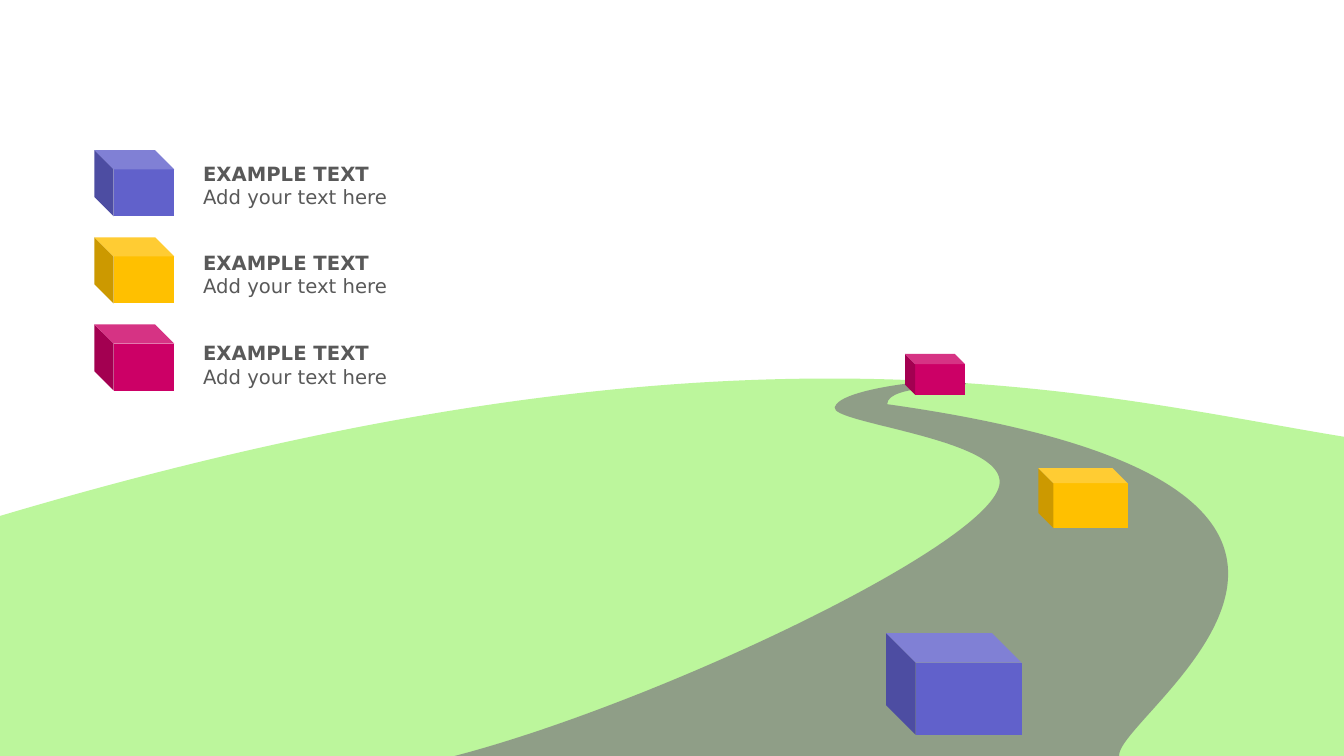
from copy import deepcopy
from dataclasses import dataclass

from lxml.etree import SubElement
from pptx import Presentation
from pptx.dml.color import RGBColor as Rgb
from pptx.enum.shapes import MSO_SHAPE as Shape
from pptx.enum.text import MSO_AUTO_SIZE as Fit
from pptx.oxml.ns import qn
from pptx.util import Pt

UNIT = 9525  # EMU in one px, 96 px to the inch


@dataclass(frozen=True)
class Theme:
    font: str = "DejaVu Sans"
    size: int = 14
    ink: str = "595959"
    hill: str = "BCF69C"
    road: str = "808080"
    blue: str = "6161CB"
    gold: str = "FFC000"
    pink: str = "CC0066"


def scale(box):
    return [n * UNIT for n in box]


class Deck:
    def __init__(self, theme, width, height):
        self.theme = theme
        self.file = Presentation()
        self.file.slide_width = width * UNIT
        self.file.slide_height = height * UNIT
        self.slide = self.file.slides.add_slide(self.file.slide_layouts[6])

    def paint(self, shape, color):
        shape.shadow.inherit = False
        shape.fill.solid()
        shape.fill.fore_color.rgb = Rgb.from_string(color)
        shape.line.fill.background()

    def area(self, box, start, parts, color, alpha=100):
        """Closed outline: a part of one point is a line, of three a curve."""
        left, top, width, height = box
        pen = self.slide.shapes.build_freeform(*start, scale=UNIT)
        pen.add_line_segments([part[-1] for part in parts])
        shape = pen.convert_to_shape()
        shape.left, shape.top, shape.width, shape.height = scale(box)

        trace = next(shape._element.iter(qn("a:path")))
        for old in list(trace):
            trace.remove(old)
        trace.set("w", str(width * UNIT))
        trace.set("h", str(height * UNIT))
        tags = {1: "a:lnTo", 3: "a:cubicBezTo"}
        steps = [("a:moveTo", [start])] + [(tags[len(p)], p) for p in parts]
        for tag, points in steps:
            step = SubElement(trace, qn(tag))
            for x, y in points:
                SubElement(step, qn("a:pt"), x=str((x - left) * UNIT),
                           y=str((y - top) * UNIT))
        SubElement(trace, qn("a:close"))

        self.paint(shape, color)
        if alpha < 100:
            tint = next(shape._element.spPr.iter(qn("a:srgbClr")))
            SubElement(tint, qn("a:alpha"), val=str(alpha * 1000))
        return shape

    def cube(self, box, color, depth=0.25):
        shape = self.slide.shapes.add_shape(Shape.CUBE, *scale(box))
        shape.adjustments[0] = depth
        shape._element.spPr.get_or_add_xfrm().set("flipH", "1")
        self.paint(shape, color)
        return shape

    def label(self, box, head, body):
        frame = self.slide.shapes.add_textbox(*scale(box)).text_frame
        frame.word_wrap = True
        frame.auto_size = Fit.SHAPE_TO_FIT_TEXT
        frame.text = f"{head}\n{body}".replace("\n", "\v")
        line = frame.paragraphs[0]
        for run, bold in zip(line.runs, (True, False)):
            font = run.font
            font.name = self.theme.font
            font.size = Pt(self.theme.size)
            font.bold = bold
            font.color.rgb = Rgb.from_string(self.theme.ink)
        gap = line._p.find(qn("a:br"))
        gap.append(deepcopy(line.runs[0]._r.rPr))


def main():
    look = Theme()
    deck = Deck(look, 1280, 720)

    hill = deck.area((-2, 361, 1282, 359), (-2, 492), [
        [(700, 283), (1036, 376), (1280, 416)],
        [(1280, 720)],
        [(0, 720)],
        [(-2, 492)],
    ], look.hill)
    road = deck.area((433, 363, 736, 357), (795, 388), [
        [(799, 372), (871, 364), (879, 364)],
        [(896, 363), (892, 363), (920, 365)],
        [(925, 370), (845, 365), (845, 385)],
        [(1414, 465), (1061, 682), (1066, 720)],
        [(433, 720)],
        [(629, 669), (960, 511), (952, 457)],
        [(948, 417), (791, 403), (795, 388)],
    ], look.road, alpha=74)
    near = deck.cube((844, 603, 129, 97), look.blue, 0.29)
    midway = deck.cube((989, 446, 85, 57), look.gold)
    deck.slide.shapes.add_group_shape([hill, road, near, midway])
    deck.cube((862, 337, 57, 39), look.pink)

    colors = (look.blue, look.gold, look.pink)
    for row, color in enumerate(colors):
        deck.cube((90, 143 + 83 * row, 76, 63), color, 0.29)
    for row in range(len(colors)):
        deck.label((184, 149 + 171 * row // 2, 216, 55),
                   "EXAMPLE TEXT", "Add your text here")

    deck.file.save("out.pptx")


if __name__ == "__main__":
    main()
